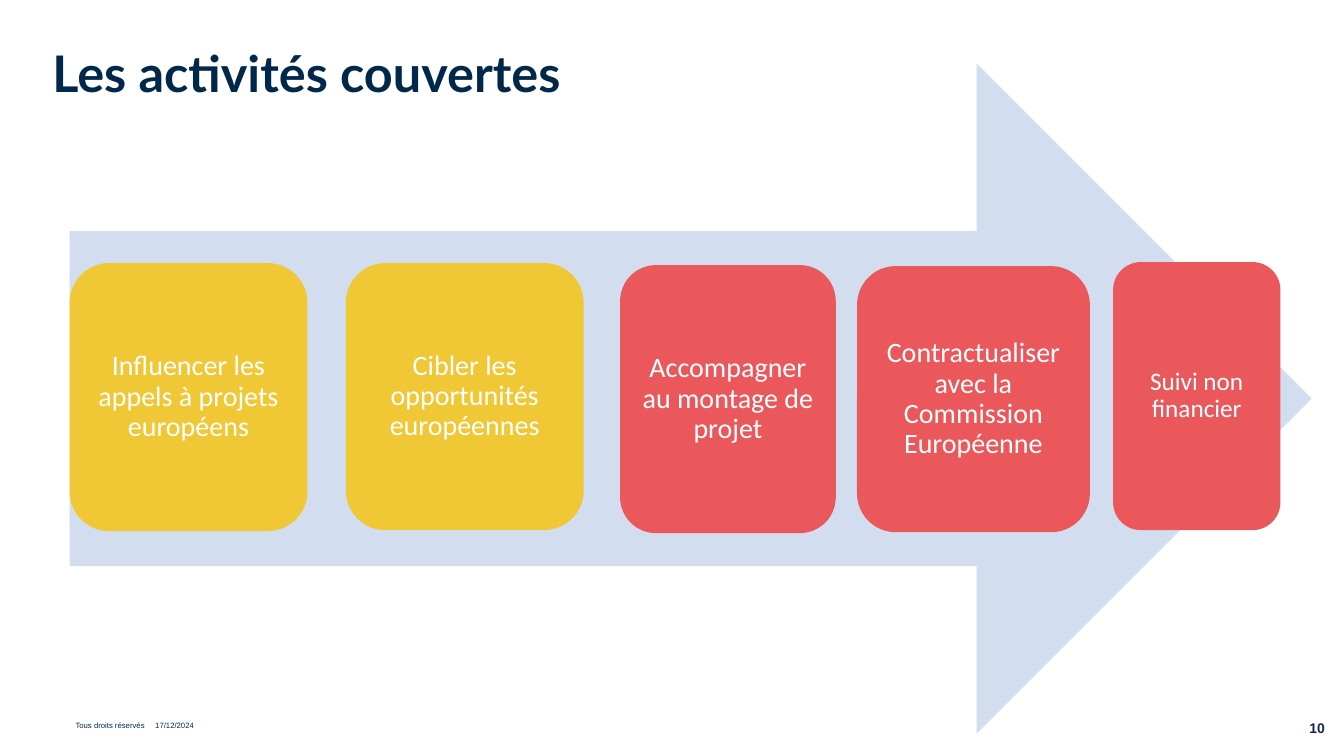
from lxml.etree import SubElement
from pptx import Presentation
from pptx.dml.color import RGBColor
from pptx.enum.shapes import MSO_SHAPE
from pptx.enum.text import MSO_ANCHOR, MSO_AUTO_SIZE, PP_ALIGN
from pptx.oxml.ns import qn
from pptx.util import Inches, Pt

COLORS = {
    "navy": "00284B",
    "page": "11284B",
    "arrow": "D2DEEF",
    "upstream": "F0C734",
    "project": "EB585C",
    "white": "FFFFFF",
}
LEFT = 0.69  # shared left edge of the arrow and the first step


def add_block(preset, box, color):
    block = slide.shapes.add_shape(preset, *map(Inches, box))
    block.shadow.inherit = False
    block.fill.solid()
    block.fill.fore_color.rgb = RGBColor.from_string(COLORS[color])
    block.line.fill.background()
    return block


def write(shape, text, font, size, color, align, bold=False, inset=0,
          anchor=MSO_ANCHOR.MIDDLE):
    frame = shape.text_frame
    frame.word_wrap = True
    frame.auto_size = MSO_AUTO_SIZE.NONE
    frame.vertical_anchor = anchor
    frame.margin_left = frame.margin_right = Inches(inset)
    frame.margin_top = frame.margin_bottom = Inches(inset)
    frame.text = text
    paragraph = frame.paragraphs[0]
    paragraph.alignment = align
    paragraph.font.name = font
    paragraph.font.size = Pt(size)
    paragraph.font.bold = bold
    paragraph.font.color.rgb = RGBColor.from_string(COLORS[color])
    return paragraph


deck = Presentation()
deck.slide_width, deck.slide_height = Inches(13.33), Inches(7.5)
slide = deck.slides.add_slide(deck.slide_layouts[5])

# Title
title = slide.shapes.title
title.left, title.top, title.width, title.height = map(
    Inches, (0.52, 0.52, 12.28, 0.55))
heading = write(title, "Les activités couvertes", "Lato", 36, "navy",
                PP_ALIGN.LEFT, bold=True, anchor=MSO_ANCHOR.TOP)
heading.line_spacing = Pt(35.8)

# Background arrow
add_block(MSO_SHAPE.RIGHT_ARROW, (LEFT, 0.63, 12.32, 6.65), "arrow")

# Steps: text, left, top, width, height, colour, text size
steps = [
    ("Influencer les appels à projets européens",
     LEFT, 2.61, 2.36, 2.66, "upstream", 20),
    ("Cibler les opportunités européennes",
     3.43, 2.61, 2.36, 2.65, "upstream", 20),
    ("Accompagner au montage de projet",
     6.15, 2.63, 2.14, 2.66, "project", 20),
    ("Contractualiser avec la Commission Européenne",
     8.5, 2.64, 2.31, 2.64, "project", 20),
    ("Suivi non financier", 11.04, 2.6, 1.66, 2.66, "project", 18),
]
for text, left, top, width, height, color, size in steps:
    step = add_block(MSO_SHAPE.ROUNDED_RECTANGLE,
                     (left, top, width, height), color)
    label = write(step, text, "Calibri", size, "white", PP_ALIGN.CENTER,
                  inset=0.08)
    label.line_spacing = 0.9

# Footer: rights and date, separated by a tab stop
rights = slide.shapes.add_textbox(*map(Inches, (0.75, 7.16, 2.13, 0.09)))
notice = write(rights, "Tous droits réservés\t17/12/2024", "Arial", 5.5,
               "navy", PP_ALIGN.LEFT, anchor=MSO_ANCHOR.TOP)
notice.line_spacing = 0.9
tab_list = notice._p.get_or_add_pPr().find(qn("a:defRPr"))
tabs = SubElement(notice._p.pPr, qn("a:tabLst"))
SubElement(tabs, qn("a:tab"), pos=str(Inches(0.79)), algn="l")
tab_list.addprevious(tabs)

# Page number
page = slide.shapes.add_textbox(*map(Inches, (12.1, 7, 1.04, 0.44)))
write(page, "10", "Arial", 10, "page", PP_ALIGN.RIGHT, bold=True)

deck.save("out.pptx")
